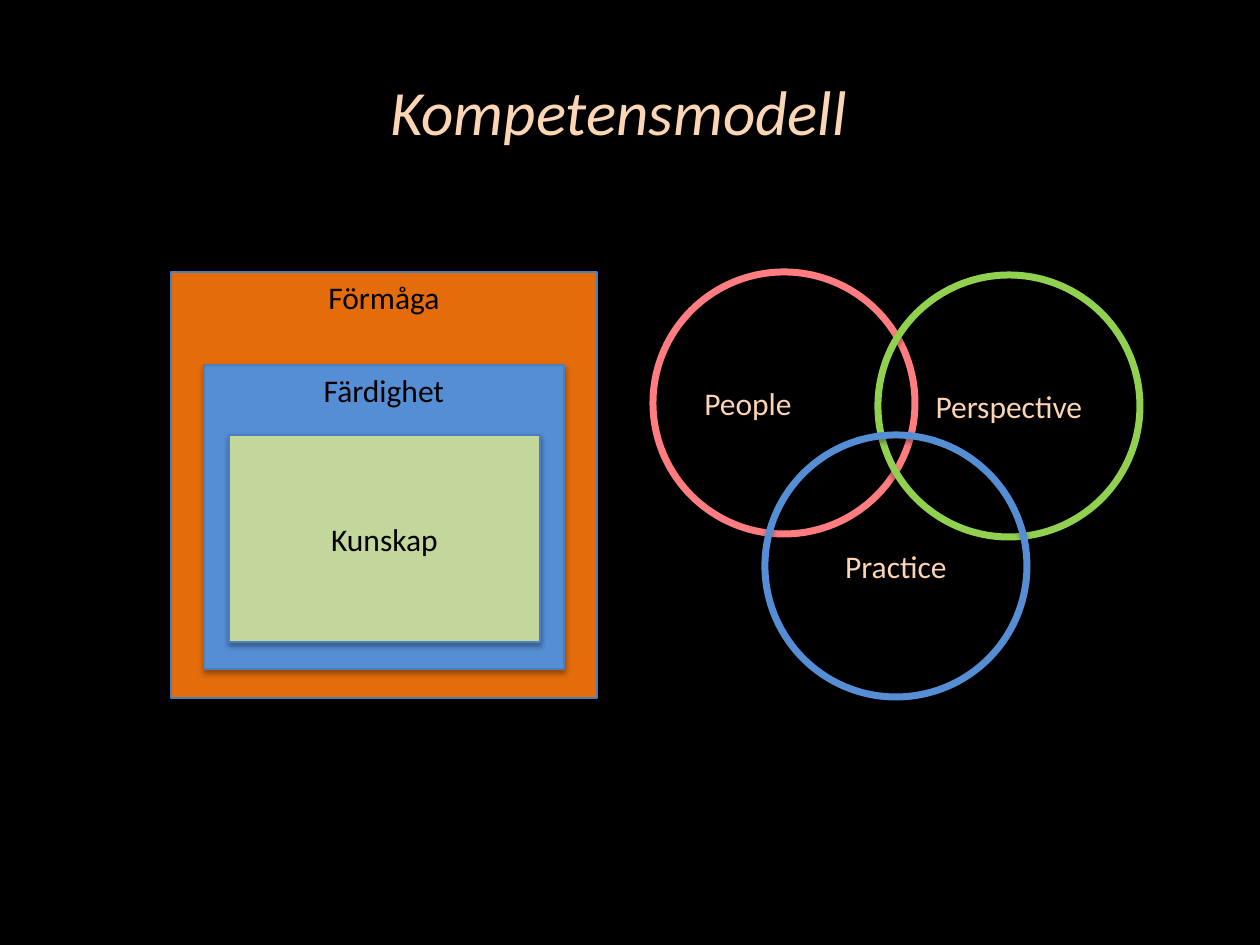
import lxml.etree
import pptx
import pptx.dml.color
import pptx.enum.shapes
import pptx.enum.text
import pptx.oxml.ns
import pptx.util

SCALE = 914400 / 126
FONT = "Calibri"
PEACH = "FCD5B5"
BLACK = "000000"
BLUE = "558ED5"
SHAPES = pptx.enum.shapes.MSO_SHAPE
ANCHOR = pptx.enum.text.MSO_ANCHOR


def px(length):
    """Turn a length in px into EMU."""
    return pptx.util.Emu(round(length * SCALE))


def color(hex_code):
    """Turn a hex string into a colour."""
    return pptx.dml.color.RGBColor.from_string(hex_code)


def apply(target, values):
    """Set each attribute of the target from a dict."""
    for attribute, value in values.items():
        setattr(target, attribute, value)


def add_shadow(shape, shade):
    """Give the shape a soft shadow that falls straight down."""
    shape.shadow.inherit = False
    effects = shape.element.spPr.find(pptx.oxml.ns.qn("a:effectLst"))
    shadow = lxml.etree.SubElement(
        effects, pptx.oxml.ns.qn("a:outerShdw"),
        blurRad="40000", dist="23000", dir="5400000", rotWithShape="0")
    tint = lxml.etree.SubElement(shadow, pptx.oxml.ns.qn("a:srgbClr"), val=shade)
    lxml.etree.SubElement(tint, pptx.oxml.ns.qn("a:alpha"), val="35000")


def write(shape, wording, text_color, font_values, frame_values):
    """Write one centred paragraph in the shape."""
    frame = shape.text_frame
    apply(frame, frame_values)
    paragraph = frame.paragraphs[0]
    paragraph.alignment = pptx.enum.text.PP_ALIGN.CENTER
    run = paragraph.add_run()
    run.text = wording
    apply(run.font, {"name": FONT, **font_values})
    run.font.color.rgb = color(text_color)


def add_figure(slide, preset, box, fill=None, line=None, line_width=0.75, shade=BLACK):
    """Add a preset shape with its fill, line and shadow."""
    figure = slide.shapes.add_shape(preset, *map(px, box))
    if fill:
        figure.fill.solid()
        figure.fill.fore_color.rgb = color(fill)
    else:
        figure.fill.background()
    if line:
        figure.line.color.rgb = color(line)
        figure.line.width = pptx.util.Pt(line_width)
    else:
        figure.line.fill.background()
    add_shadow(figure, shade)
    return figure


def build_backdrop(slide, box):
    """Lay a black panel behind the title."""
    backdrop = add_figure(slide, SHAPES.RECTANGLE, box, fill=BLACK, shade="808080")
    slide.shapes.title.element.addprevious(backdrop.element)


def build_title(slide, box):
    """Place and format the title."""
    title = slide.shapes.title
    apply(title, dict(zip(("left", "top", "width", "height"), map(px, box))))
    write(title, "Kompetensmodell", PEACH,
          {"size": pptx.util.Pt(36), "italic": True},
          {"word_wrap": False, "vertical_anchor": ANCHOR.MIDDLE})


def build_nested_levels(slide, box):
    """Draw the three competence levels inside each other."""
    left, top, width, height = box
    levels = [
        ("Förmåga", "E46C0A", (0, 0, width, height), ANCHOR.TOP),
        ("Färdighet", BLUE, (33, 93, width - 66, height - 122), ANCHOR.TOP),
        ("Kunskap", "C3D69B", (58, 163, width - 115, height - 219), ANCHOR.MIDDLE),
    ]
    for wording, fill, (x, y, level_width, level_height), anchor in levels:
        level = add_figure(slide, SHAPES.RECTANGLE,
                           (left + x, top + y, level_width, level_height),
                           fill=fill, line="4B7EBC")
        write(level, wording, BLACK, {"size": pptx.util.Pt(18)},
              {"word_wrap": True, "vertical_anchor": anchor})


def build_overlapping_circles(slide, box):
    """Draw the three overlapping circles of the model."""
    left, top, width, height = box
    diameter = 262
    circles = [
        ("People", "FF7C80", 0, 0, {"margin_left": 0, "margin_right": px(72)}),
        ("Perspective", "92D050", width - diameter, 3, {}),
        ("Practice", BLUE, (width - diameter) // 2, height - diameter, {}),
    ]
    for wording, outline, x, y, margins in circles:
        circle = add_figure(slide, SHAPES.OVAL,
                            (left + x, top + y, diameter, diameter),
                            line=outline, line_width=4)
        write(circle, wording, PEACH, {"size": pptx.util.Pt(18)},
              {"word_wrap": True, "vertical_anchor": ANCHOR.MIDDLE, **margins})


def main():
    """Build the slide and save it."""
    deck = pptx.Presentation()
    apply(deck, {"slide_width": px(1260), "slide_height": px(945)})
    slide = deck.slides.add_slide(deck.slide_layouts[5])
    build_backdrop(slide, (0, 0, 1260, 945))
    build_title(slide, (374, 66, 489, 89))
    build_nested_levels(slide, (171, 272, 426, 426))
    build_overlapping_circles(slide, (653, 272, 487, 425))
    deck.save("out.pptx")


if __name__ == "__main__":
    main()
